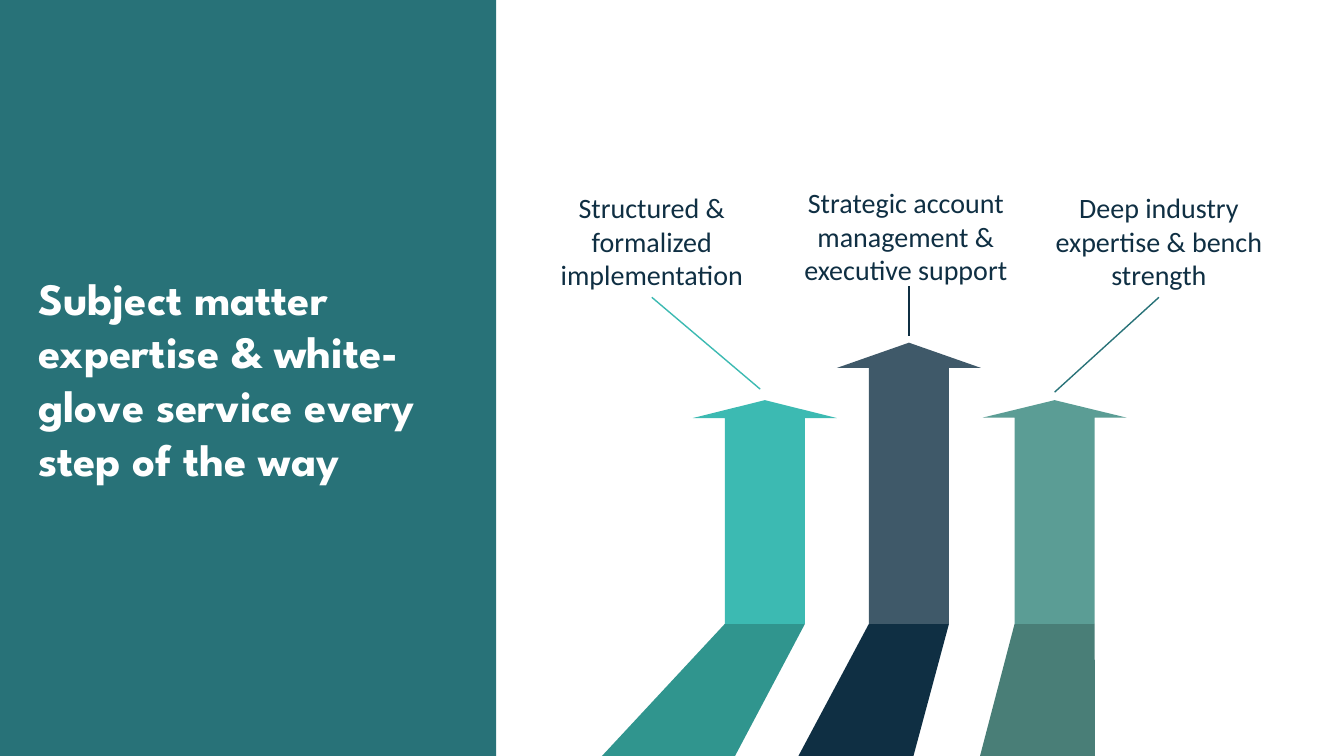
import collections

import pptx
import pptx.dml.color
import pptx.enum.shapes
import pptx.enum.text
import pptx.oxml.ns
import pptx.util
from lxml import etree

RGBColor = pptx.dml.color.RGBColor
WHITE = RGBColor(0xFF, 0xFF, 0xFF)
PANEL_TEAL = RGBColor(0x28, 0x72, 0x78)
NAVY = RGBColor(0x0F, 0x2F, 0x43)
SLATE = RGBColor(0x3F, 0x59, 0x69)
TURQUOISE = RGBColor(0x3C, 0xBA, 0xB2)
DEEP_TURQUOISE = RGBColor(0x30, 0x95, 0x8E)
SAGE = RGBColor(0x5B, 0x9D, 0x95)
DEEP_SAGE = RGBColor(0x49, 0x7E, 0x77)

SLIDE_WIDTH = pptx.util.Inches(13.33)
SLIDE_HEIGHT = pptx.util.Inches(7.5)
COLUMN = SLIDE_WIDTH / 100
ROW = SLIDE_HEIGHT / 100

HALF_HEAD = 5.36
HALF_SHAFT = 2.98
FOLD_ROW = 82.53
LABEL_COLUMNS = 17.78
LABEL_ROWS = 14.8

Box = collections.namedtuple("Box", "left top width height")
Strength = collections.namedtuple(
    "Strength",
    "text label_left label_top centre tip shoulder base_left base_right "
    "shaft_color floor_color leader_color leader_start leader_end")

TITLE_BOX = Box(0, 0, 36.91, 100)
ARROWS_BOX = Box(36.91, 0, 63.09, 100)

STRENGTHS = [
    Strength("Structured & formalized implementation", 2.7, 24.53,
             20, 52.93, 55.3, 7.88, 17.78,
             TURQUOISE, DEEP_TURQUOISE, TURQUOISE, None, (19.65, 51.47)),
    Strength("Strategic account management & executive support", 21.6, 23.87,
             30.72, 45.33, 48.67, 22.5, 31.06,
             SLATE, NAVY, NAVY, (30.72, 37.87), (30.72, 44.4)),
    Strength("Deep industry expertise & bench strength", 40.43, 24.53,
             41.56, 52.93, 55.25, 36.01, 44.56,
             SAGE, DEEP_SAGE, PANEL_TEAL, None, (41.56, 51.87)),
]


def place(box, column, row):
    return round((box.left + column) * COLUMN), round((box.top + row) * ROW)


def paint(shape, color):
    shape.shadow.inherit = False
    shape.fill.solid()
    shape.fill.fore_color.rgb = color
    shape.line.fill.background()


def add_outline(slide, box, corners, color):
    start, *others = [place(box, *corner) for corner in corners]
    builder = slide.shapes.build_freeform(*start, scale=1.0)
    builder.add_line_segments(others, close=True)
    paint(builder.convert_to_shape(), color)


def add_title_panel(slide, box):
    panel = slide.shapes.add_shape(
        pptx.enum.shapes.MSO_SHAPE.RECTANGLE, *place(box, 0, 0),
        round(box.width * COLUMN), round(box.height * ROW))
    paint(panel, PANEL_TEAL)

    title = slide.shapes.title
    title.element.addprevious(panel.element)
    title.left, title.top = place(box, 2.1, 34.93)
    title.width, title.height = round(35.11 * COLUMN), round(30.13 * ROW)
    frame = title.text_frame
    frame.text = "Subject matter expertise & white-glove service every step of the way"
    frame.word_wrap = True
    frame.auto_size = pptx.enum.text.MSO_AUTO_SIZE.NONE
    frame.vertical_anchor = pptx.enum.text.MSO_ANCHOR.MIDDLE
    paragraph = frame.paragraphs[0]
    paragraph.alignment = pptx.enum.text.PP_ALIGN.LEFT
    paragraph.font.name = "League Spartan"
    paragraph.font.size = pptx.util.Pt(32)
    paragraph.font.bold = True
    paragraph.font.color.rgb = WHITE


def add_arrow(slide, box, strength):
    centre, shoulder = strength.centre, strength.shoulder
    shaft_left, shaft_right = centre - HALF_SHAFT, centre + HALF_SHAFT
    add_outline(slide, box, [
        (shaft_left, FOLD_ROW), (shaft_right, FOLD_ROW),
        (strength.base_right, box.height), (strength.base_left, box.height),
    ], strength.floor_color)
    add_outline(slide, box, [
        (centre, strength.tip), (centre - HALF_HEAD, shoulder),
        (shaft_left, shoulder), (shaft_left, FOLD_ROW),
        (shaft_right, FOLD_ROW), (shaft_right, shoulder),
        (centre + HALF_HEAD, shoulder),
    ], strength.shaft_color)


def add_label(slide, box, strength):
    label = slide.shapes.add_textbox(
        *place(box, strength.label_left, strength.label_top),
        round(LABEL_COLUMNS * COLUMN), round(LABEL_ROWS * ROW))
    frame = label.text_frame
    frame.text = strength.text
    frame.word_wrap = True
    frame.auto_size = pptx.enum.text.MSO_AUTO_SIZE.SHAPE_TO_FIT_TEXT
    paragraph = frame.paragraphs[0]
    paragraph.alignment = pptx.enum.text.PP_ALIGN.CENTER
    paragraph.font.name = "Calibri"
    paragraph.font.size = pptx.util.Pt(20)
    paragraph.font.color.rgb = NAVY
    return label


def add_leader(slide, box, strength, label):
    start = strength.leader_start or (
        strength.label_left + LABEL_COLUMNS / 2, strength.label_top + LABEL_ROWS)
    leader = slide.shapes.add_connector(
        pptx.enum.shapes.MSO_CONNECTOR.STRAIGHT,
        *place(box, *start), *place(box, *strength.leader_end))
    if strength.leader_start is None:
        leader.begin_connect(label, 2)
    leader.line.color.rgb = strength.leader_color
    leader.line.width = pptx.util.Pt(1)
    etree.SubElement(leader.element.spPr, pptx.oxml.ns.qn("a:effectLst"))


def add_strengths(slide, box):
    for strength in STRENGTHS:
        add_arrow(slide, box, strength)
        label = add_label(slide, box, strength)
        add_leader(slide, box, strength, label)


def main():
    presentation = pptx.Presentation()
    presentation.slide_width = SLIDE_WIDTH
    presentation.slide_height = SLIDE_HEIGHT
    title_only = presentation.slide_layouts.get_by_name("Title Only")
    slide = presentation.slides.add_slide(title_only)
    add_title_panel(slide, TITLE_BOX)
    add_strengths(slide, ARROWS_BOX)
    presentation.save("out.pptx")


if __name__ == "__main__":
    main()
